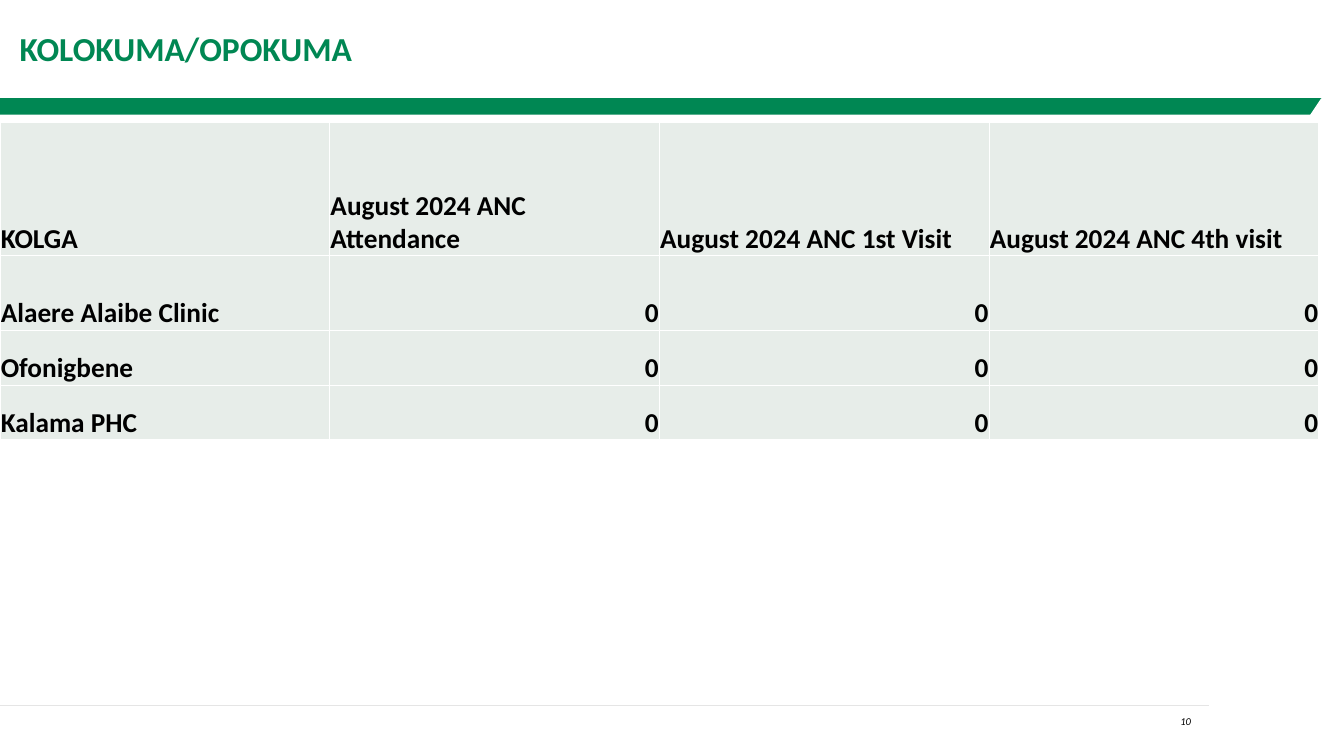
from dataclasses import dataclass

import lxml.etree
import pptx
import pptx.dml.color
import pptx.enum.shapes
import pptx.enum.text
import pptx.oxml.ns
import pptx.util

Cm = pptx.util.Cm
Pt = pptx.util.Pt
RGBColor = pptx.dml.color.RGBColor
Align = pptx.enum.text.PP_ALIGN
Anchor = pptx.enum.text.MSO_ANCHOR
ShapeType = pptx.enum.shapes.MSO_SHAPE
qn = pptx.oxml.ns.qn

GREEN = RGBColor(0x00, 0x87, 0x53)
PALE_GREEN = RGBColor(0xE7, 0xED, 0xE9)
GREY = RGBColor(0xE5, 0xE5, 0xE5)
BLACK = RGBColor(0x00, 0x00, 0x00)
WHITE = RGBColor(0xFF, 0xFF, 0xFF)
FONT = "Calibri"

SLIDE_WIDTH = Cm(34.77)
SLIDE_HEIGHT = Cm(19.05)
COLUMN_WIDTH = Cm(8.53)
HEADERS = ("KOLGA", "August 2024 ANC Attendance",
           "August 2024 ANC 1st Visit", "August 2024 ANC 4th visit")


@dataclass(frozen=True)
class Box:
    left: float
    top: float
    width: float
    height: float

    def lengths(self) -> tuple:
        return Cm(self.left), Cm(self.top), Cm(self.width), Cm(self.height)


@dataclass(frozen=True)
class TableRow:
    height: float
    texts: tuple


@dataclass(frozen=True)
class BannerPart:
    kind: ShapeType
    box: Box
    color: RGBColor


BANNER = (
    BannerPart(ShapeType.RECTANGLE, Box(0, 2.54, 34.19, 0.43), GREEN),
    BannerPart(ShapeType.ISOSCELES_TRIANGLE, Box(33.83, 2.54, 0.71, 0.53), WHITE),
)
ROWS = (
    TableRow(3.45, HEADERS),
    TableRow(1.93, ("Alaere Alaibe Clinic", "0", "0", "0")),
    TableRow(1.42, ("Ofonigbene", "0", "0", "0")),
    TableRow(1.42, ("Kalama PHC", "0", "0", "0")),
)


def write_text(frame, text: str, *, size: float, color: RGBColor = BLACK,
               bold: bool = False, italic: bool = False,
               align: Align = Align.LEFT) -> None:
    frame.word_wrap = True
    paragraph = frame.paragraphs[0]
    paragraph.alignment = align
    run = paragraph.add_run()
    run.text = text
    run.font.name = FONT
    run.font.size = Pt(size)
    run.font.color.rgb = color
    run.font.bold = bold
    run.font.italic = italic


def add_banner_part(slide, part: BannerPart) -> None:
    shape = slide.shapes.add_shape(part.kind, *part.box.lengths())
    shape.shadow.inherit = False
    shape.fill.solid()
    shape.fill.fore_color.rgb = part.color
    shape.line.fill.background()


def add_footer_line(slide) -> None:
    line = slide.shapes.add_connector(
        pptx.enum.shapes.MSO_CONNECTOR.STRAIGHT,
        Cm(0), Cm(18.26), Cm(31.29), Cm(18.26))
    line.line.color.rgb = GREY
    line.line.width = Pt(1)
    lxml.etree.SubElement(line._element.spPr, qn("a:effectLst"))


def add_title(slide, text: str) -> None:
    box = slide.shapes.add_textbox(*Box(0, 0, 34.77, 2.51).lengths())
    box.text_frame.margin_left = Cm(0.51)
    box.text_frame.vertical_anchor = Anchor.MIDDLE
    write_text(box.text_frame, text, size=24.6, color=GREEN, bold=True)


def add_page_number(slide, text: str) -> None:
    box = slide.shapes.add_textbox(*Box(27.81, 18.39, 3.25, 0.61).lengths())
    write_text(box.text_frame, text, size=7.7, italic=True, align=Align.RIGHT)


def format_cell(cell) -> None:
    """Set margins, anchor, white borders and fill."""
    cell.margin_left = cell.margin_right = cell.margin_top = Cm(0.02)
    cell.margin_bottom = Cm(0)
    cell.vertical_anchor = Anchor.BOTTOM
    properties = cell._tc.get_or_add_tcPr()
    for side in ("L", "R", "T", "B"):
        border = lxml.etree.SubElement(properties, qn(f"a:ln{side}"), w=str(Pt(1)))
        fill = lxml.etree.SubElement(border, qn("a:solidFill"))
        lxml.etree.SubElement(fill, qn("a:srgbClr"), val=str(WHITE))
    cell.fill.solid()
    cell.fill.fore_color.rgb = PALE_GREEN


def add_attendance_table(slide, rows: tuple) -> None:
    column_count = len(HEADERS)
    total_height = Cm(sum(row.height for row in rows))
    table = slide.shapes.add_table(
        len(rows), column_count, Cm(0), Cm(3.17),
        COLUMN_WIDTH * column_count, total_height).table
    table.first_row = False
    table.horz_banding = False
    for column in table.columns:
        column.width = COLUMN_WIDTH
    for row_index, row in enumerate(rows):
        table.rows[row_index].height = Cm(row.height)
        for column_index, text in enumerate(row.texts):
            cell = table.cell(row_index, column_index)
            format_cell(cell)
            align = Align.RIGHT if text.isdigit() else Align.LEFT
            write_text(cell.text_frame, text, size=20, bold=True, align=align)


def main() -> None:
    presentation = pptx.Presentation()
    presentation.slide_width = SLIDE_WIDTH
    presentation.slide_height = SLIDE_HEIGHT
    slide = presentation.slides.add_slide(presentation.slide_layouts[6])
    for part in BANNER:
        add_banner_part(slide, part)
    add_footer_line(slide)
    add_title(slide, "KOLOKUMA/OPOKUMA")
    add_page_number(slide, "10")
    add_attendance_table(slide, ROWS)
    presentation.save("out.pptx")


if __name__ == "__main__":
    main()
